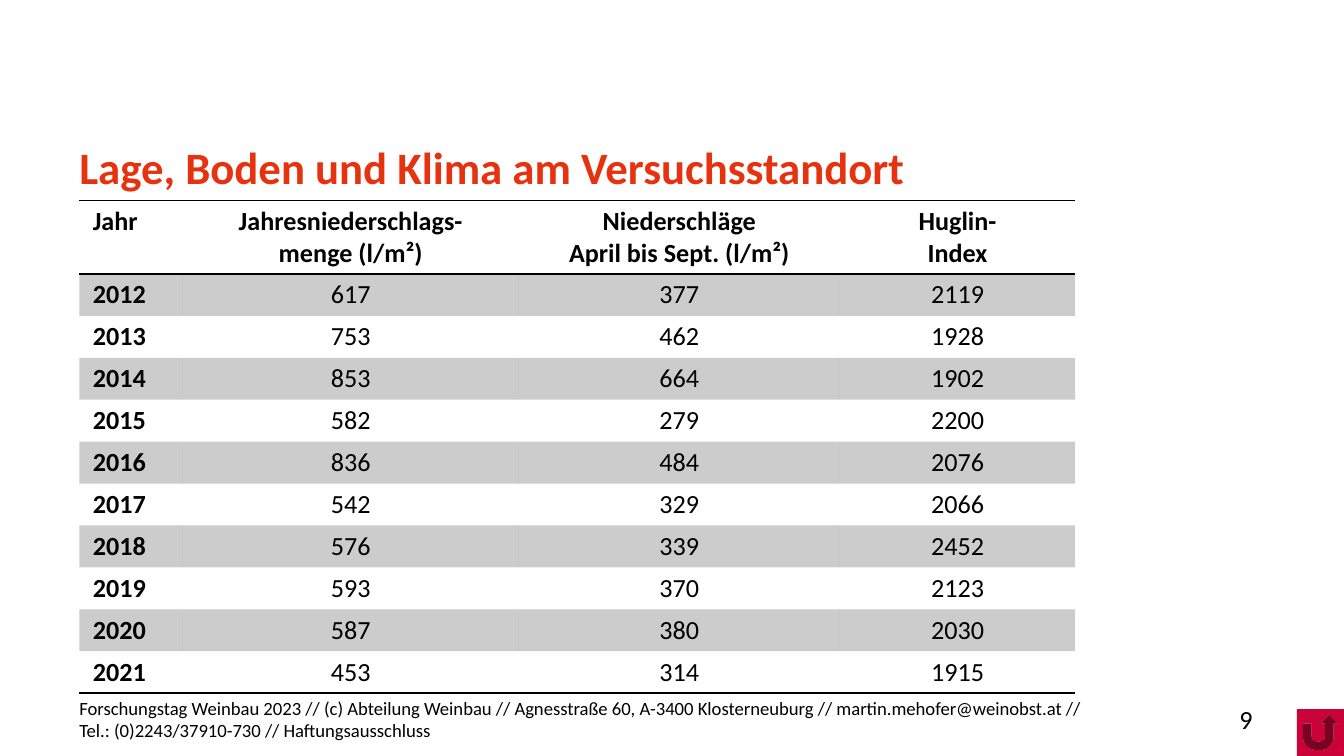
from lxml.etree import SubElement
from pptx import Presentation
from pptx.dml.color import RGBColor
from pptx.enum.shapes import MSO_SHAPE
from pptx.enum.text import MSO_ANCHOR, MSO_AUTO_SIZE, PP_ALIGN
from pptx.oxml import parse_xml
from pptx.oxml.ns import nsdecls, qn
from pptx.util import Inches, Pt

COLORS = {"title": "E6320F", "ink": "000000", "button": "CA0237"}
NO_STYLE_NO_GRID = "{2D5ABB26-0587-4C30-8999-92F81FD0307C}"

deck = Presentation()
deck.slide_width = Inches(10)
deck.slide_height = deck.slide_width * 9 // 16
page = deck.slides.add_slide(deck.slide_layouts[5])


def area(left, top, width, height):
    """Turn percentages of the slide's width and height into lengths."""
    across, down = deck.slide_width / 100, deck.slide_height / 100
    return [round(n) for n in (left * across, top * down, width * across, height * down)]


def write(frame, text, size, color="ink", bold=False, align=PP_ALIGN.LEFT):
    frame.text = text
    for para in frame.paragraphs:
        para.alignment = align
        for name, value in {"name": "Calibri", "size": Pt(size), "bold": bold}.items():
            setattr(para.font, name, value)
        para.font.color.rgb = RGBColor.from_string(COLORS[color])


# Title
title = page.shapes.title
title.left, title.top, title.width, title.height = area(5.9, 18.13, 87.3, 12.1)
write(title.text_frame, "Lage, Boden und Klima am Versuchsstandort", 24, "title", True)
title.text_frame.paragraphs[0].line_spacing = Pt(30)

# Footer and page number
footer = page.shapes.add_textbox(*area(5.9, 93.15, 75.2, 3.91))
write(footer.text_frame,
      "Forschungstag Weinbau 2023 // (c) Abteilung Weinbau // Agnesstraße 60, "
      "A-3400 Klosterneuburg // martin.mehofer@weinobst.at // "
      "Tel.: (0)2243/37910-730 // Haftungsausschluss", 10)
number = page.shapes.add_textbox(*area(82.7, 93.15, 10.5, 3.91))
write(number.text_frame, "9", 14, align=PP_ALIGN.RIGHT)

for box, anchor in ((title, MSO_ANCHOR.TOP), (footer, MSO_ANCHOR.MIDDLE),
                    (number, MSO_ANCHOR.MIDDLE)):
    frame_format = {"margin_left": 0, "margin_right": 0, "margin_top": 0, "margin_bottom": 0,
                    "word_wrap": True, "auto_size": MSO_AUTO_SIZE.NONE,
                    "vertical_anchor": anchor}
    for name, value in frame_format.items():
        setattr(box.text_frame, name, value)

# Climate table
rows = [
    ("Jahr", "Jahresniederschlags-\nmenge (l/m²)",
     "Niederschläge\nApril bis Sept. (l/m²)", "Huglin-\nIndex"),
    (2012, 617, 377, 2119),
    (2013, 753, 462, 1928),
    (2014, 853, 664, 1902),
    (2015, 582, 279, 2200),
    (2016, 836, 484, 2076),
    (2017, 542, 329, 2066),
    (2018, 576, 339, 2452),
    (2019, 593, 370, 2123),
    (2020, 587, 380, 2030),
    (2021, 453, 314, 1915),
]
column_shares = (7.7, 25, 23.9, 17.5)
header_share, row_share = 9.7, 5.54
last = len(rows) - 1
borders = {0: ("lnT", "lnB"), last: ("lnB",)}

table = page.shapes.add_table(
    len(rows), len(column_shares),
    *area(5.9, 26.5, sum(column_shares), header_share + last * row_share)).table
table.horz_banding = False
table._tbl.tblPr.find(qn("a:tableStyleId")).text = NO_STYLE_NO_GRID
for column, share in zip(table.columns, column_shares):
    column.width = area(0, 0, share, 0)[2]

for r, values in enumerate(rows):
    table.rows[r].height = area(0, 0, 0, row_share if r else header_share)[3]
    for c, value in enumerate(values):
        cell = table.cell(r, c)
        cell.margin_left = cell.margin_right = Inches(0.1)
        cell.margin_top = cell.margin_bottom = Pt(2.7)
        write(cell.text_frame, str(value), 14, bold=r == 0 or c == 0,
              align=PP_ALIGN.CENTER if c else PP_ALIGN.LEFT)
        properties = cell._tc.get_or_add_tcPr()
        if r % 2:
            cell.fill.solid()
            cell.fill.fore_color.rgb = RGBColor.from_string(COLORS["ink"])
            tint = properties.find(".//" + qn("a:srgbClr"))
            SubElement(tint, qn("a:alpha"), val="20000")
        else:
            cell.fill.background()
        for place, side in enumerate(borders.get(r, ())):
            properties.insert(place, parse_xml(
                f'<a:{side} {nsdecls("a")} w="{Pt(1)}"><a:solidFill>'
                f'<a:srgbClr val="{COLORS["ink"]}"/></a:solidFill></a:{side}>'))

# Return button in the corner
button = page.shapes.add_shape(MSO_SHAPE.ACTION_BUTTON_RETURN, *area(96.5, 93.8, 3.5, 6.2))
button.shadow.inherit = False
button.fill.solid()
button.fill.fore_color.rgb = RGBColor.from_string(COLORS["button"])
button.line.fill.background()

deck.save("out.pptx")
